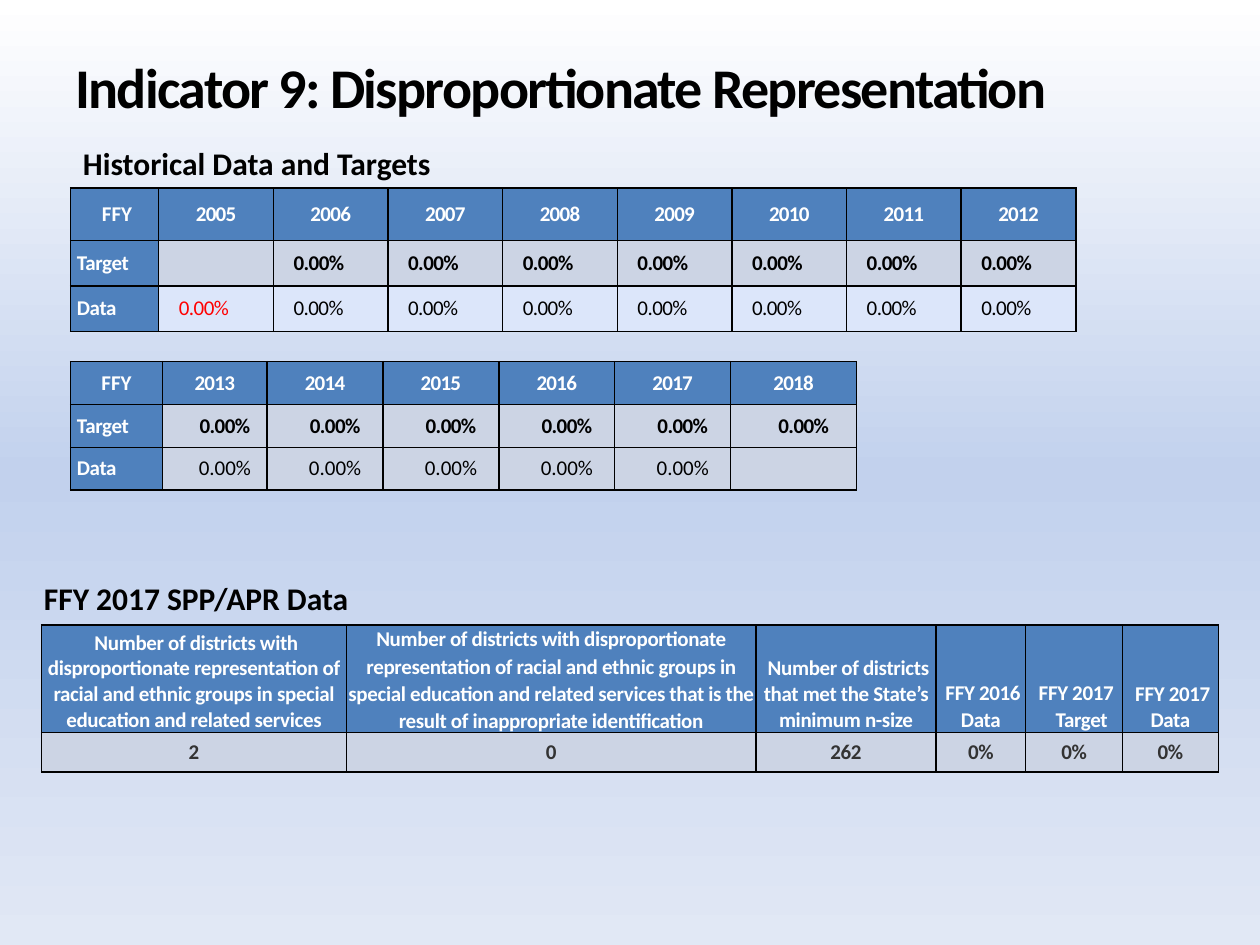
from copy import deepcopy

from lxml import etree
from pptx import Presentation
from pptx.dml.color import RGBColor
from pptx.enum.text import MSO_ANCHOR, PP_ALIGN
from pptx.oxml.ns import qn
from pptx.util import Inches, Pt

LEFT, MID = PP_ALIGN.LEFT, PP_ALIGN.CENTER
BASE, HALF = MSO_ANCHOR.BOTTOM, MSO_ANCHOR.MIDDLE
WHITE = RGBColor(0xFF, 0xFF, 0xFF)
BLACK = RGBColor(0x00, 0x00, 0x00)
RED = RGBColor(0xFF, 0x00, 0x00)
DARK = RGBColor(0x33, 0x33, 0x33)
BLUE = RGBColor(0x4F, 0x81, 0xBD)
GREY = RGBColor(0xCC, 0xD4, 0xE4)
PALE = RGBColor(0xDC, 0xE6, 0xFA)
HAZE = RGBColor(0xC2, 0xD1, 0xED)
MIST = RGBColor(0xE1, 0xE8, 0xF5)

HEAD = {"alignment": MID, "space_before": Pt(0)}
NAME = {"alignment": LEFT, "space_before": Pt(3.8)}
RATE = {"alignment": LEFT, "space_before": Pt(2)}
DROP = {"alignment": MID, "space_before": Pt(3.8)}
PACK = {"alignment": MID, "space_before": Pt(3.8), "line_spacing": 1.07}

prs = Presentation()
prs.slide_width, prs.slide_height = Inches(10), Inches(7.5)
slide = prs.slides.add_slide(prs.slide_layouts[6])

back = slide.background.fill
back.gradient()
back.gradient_angle = 270
stops = back._fill._gradFill.find(qn("a:gsLst"))
stops.append(deepcopy(stops[0]))
for stop, (place, tone) in zip(back.gradient_stops, [(0, WHITE), (0.5, HAZE), (1, MIST)]):
    stop.position = place
    stop.color.rgb = tone


def write(para, text, size, tone, space=0, bold=True, form={}):
    for key, val in form.items():
        setattr(para, key, val)
    run = para.add_run()
    run.text = text
    for key, val in {"size": Pt(size), "bold": bold, "name": "Calibri"}.items():
        setattr(run.font, key, val)
    run.font.color.rgb = tone
    if space:
        run.font._element.set("spc", str(space))


def grid(left, top, cols, rows, cells):
    table = slide.shapes.add_table(
        len(rows), len(cols), Inches(left), Inches(top), Inches(sum(cols)), Inches(sum(rows))
    ).table
    for col, width in zip(table.columns, cols):
        col.width = Inches(width)
    for row, height in zip(table.rows, rows):
        row.height = Inches(height)
    for r, line in enumerate(cells):
        for c, (text, fill, tone, space, bold, form, dent, anchor) in enumerate(line):
            cell = table.cell(r, c)
            for side in ("left", "right", "top", "bottom"):
                setattr(cell, "margin_" + side, 0)
            cell.vertical_anchor = anchor
            props = cell._tc.get_or_add_tcPr()
            for side in "LRTB":
                edge = etree.SubElement(props, qn("a:ln" + side), w=str(Pt(1)))
                paint = etree.SubElement(edge, qn("a:solidFill"))
                etree.SubElement(paint, qn("a:srgbClr"), val=str(BLACK))
            cell.fill.solid()
            cell.fill.fore_color.rgb = fill
            for i, part in enumerate(text.split("\n") if text else []):
                para = cell.text_frame.add_paragraph() if i else cell.text_frame.paragraphs[0]
                write(para, part, 12, tone, space, bold, form)
                if i:
                    para.space_before = Pt(0.6)
                shift = 0.12 if part == "Target" and i else dent
                if shift:
                    para._p.get_or_add_pPr().set("marL", str(Inches(shift)))


titles = [
    ("Indicator 9: Disproportionate Representation", 0.5, 0.17, 9.33, 0.83, 32, -100),
    ("Historical Data and Targets", 0.56, 1.09, 3.25, 0.4, 18, 0),
    ("FFY 2017 SPP/APR Data", 0.25, 4.55, 3.25, 0.4, 18, 0),
]
for text, left, top, width, height, size, space in titles:
    frame = slide.shapes.add_textbox(
        Inches(left), Inches(top), Inches(width), Inches(height)
    ).text_frame
    frame.word_wrap = True
    frame.vertical_anchor = BASE if size == 32 else MSO_ANCHOR.TOP
    write(frame.paragraphs[0], text, size, BLACK, space)

ZERO = "0.00%"
spans = [
    (1.49, [0.7] + [0.91] * 8, [0.42, 0.36, 0.36], " FFY", 2005, HEAD, RATE, PALE, 0),
    (2.87, [0.73, 0.83] + [0.92] * 4 + [1], [0.34] * 3, "FFY", 2013, DROP,
     {**RATE, "alignment": MID}, GREY, 5),
]
for top, cols, rows, label, start, head, rate, shade, gap in spans:
    count = len(cols) - 1
    years = [(label, BLUE, WHITE, 0, True, head, 0, HALF)]
    goals = [("Target", BLUE, WHITE, -20, True, NAME, 0.05, HALF)]
    facts = [("Data", BLUE, WHITE, -20, True, NAME, 0.05, HALF)]
    for n in range(count):
        first = start + n == 2005
        goal = "" if first else ZERO
        fact = "" if n == gap and gap else ZERO
        years.append((str(start + n), BLUE, WHITE, -40, True, head, 0, HALF))
        goals.append((goal, GREY, BLACK, -30, True, rate, 0.16, HALF))
        facts.append((fact, shade, RED if first else BLACK, 0 if gap else -30, False, rate, 0.16, HALF))
    grid(0.56, top, cols, rows, [years, goals, facts])

GROUP = (
    "Number of districts with disproportionate representation of racial and "
    "ethnic groups in special education and related services"
)
heads = [
    " " + GROUP,
    GROUP + " that is the result of inappropriate identification",
    " Number of districts that met the State’s minimum n-size",
    " FFY 2016\nData",
    " FFY 2017\nTarget",
    " FFY 2017 Data",
]
counts = ["2", "0", "262", "0%", "0%", "0%"]
grid(
    0.33, 4.96, [2.42, 3.25, 1.43, 0.71, 0.77, 0.76], [0.81, 0.31],
    [
        [(t, BLUE, WHITE, -20, True, PACK if t.startswith(GROUP) else HEAD, 0, BASE) for t in heads],
        [(t, GREY, DARK, -20 if len(t) > 1 else 0, True, DROP, 0, HALF) for t in counts],
    ],
)

prs.save("out.pptx")
